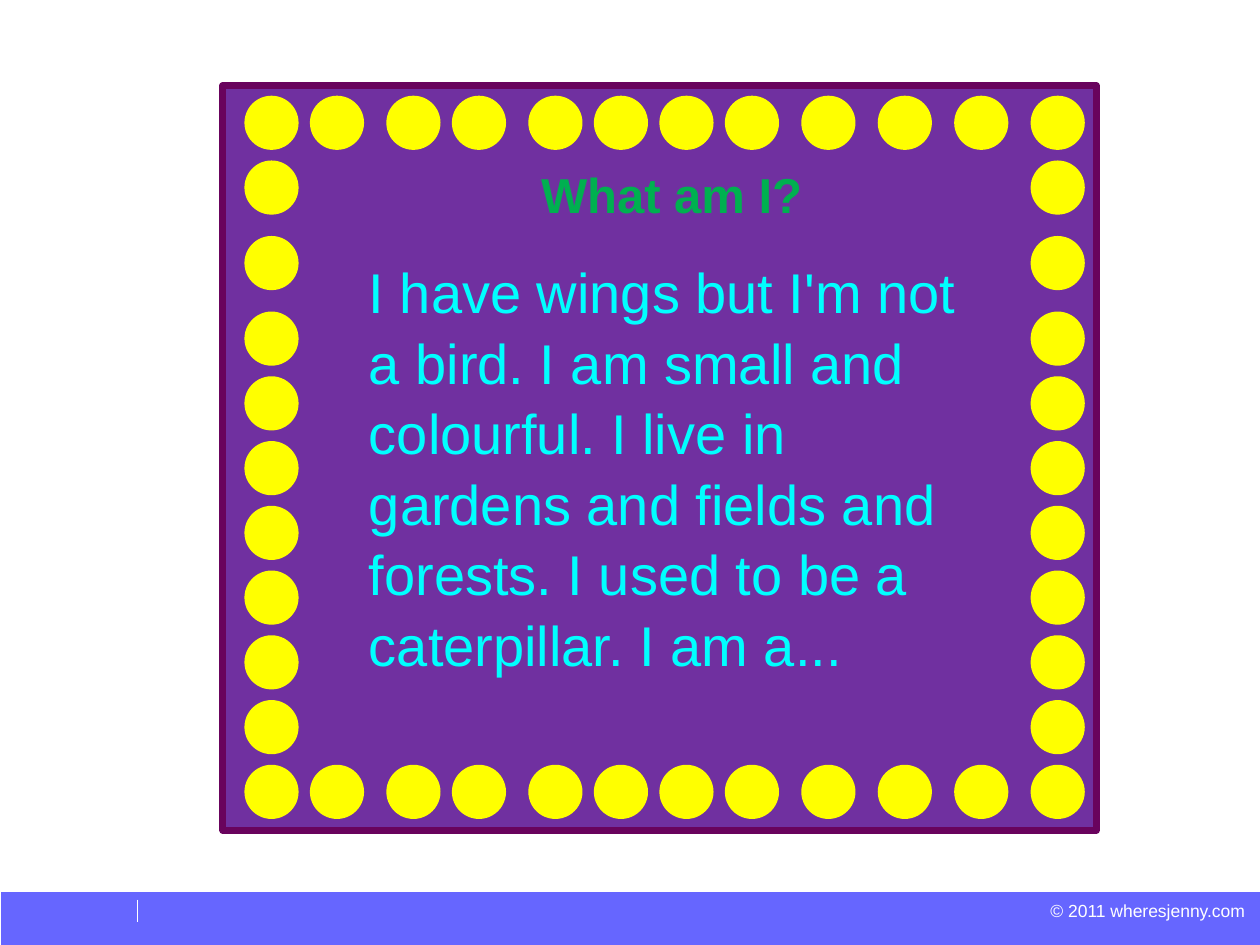
from dataclasses import dataclass
from itertools import accumulate

from lxml import etree
from pptx import Presentation
from pptx.dml.color import RGBColor
from pptx.enum.shapes import MSO_CONNECTOR as Connector, MSO_SHAPE as Shape
from pptx.enum.text import MSO_ANCHOR as Anchor, PP_ALIGN as Align
from pptx.oxml.ns import qn
from pptx.slide import Slide
from pptx.util import Inches, Pt

COLUMNS, ROWS = 100, 75
WIDTH, HEIGHT = Inches(10), Inches(7.5)
DOT = 4.3
WIDE_STEP = 7 / 6  # a wide step between dots, in narrow steps


def colour(value):
    return RGBColor.from_string(value)


def dot_stops(first, last, pattern):
    """Spread dots from first to last; the pattern names each step n(arrow) or w(ide)."""
    weights = [WIDE_STEP if step == "w" else 1 for step in pattern]
    narrow = (last - first) / sum(weights)
    return [first + narrow * total for total in accumulate(weights, initial=0)]


@dataclass
class Card:
    slide: Slide
    font: str = "Arial"
    line_spacing: float = 1.05

    def box(self, left, top, width, height):
        """Turn columns and rows of the grid into slide lengths."""
        return (int(WIDTH * left / COLUMNS), int(HEIGHT * top / ROWS),
                int(WIDTH * width / COLUMNS), int(HEIGHT * height / ROWS))

    def shape(self, kind, place, fill, line=None, line_width=0, parent=None):
        shapes = (parent or self.slide).shapes
        shape = shapes.add_shape(kind, *self.box(*place))
        shape.shadow.inherit = False
        shape.fill.solid()
        shape.fill.fore_color.rgb = colour(fill)
        if line:
            shape.line.color.rgb = colour(line)
            shape.line.width = Pt(line_width)
        else:
            shape.line.fill.background()

    def vertical_line(self, left, top, height, line):
        x, y, _, length = self.box(left, top, 0, height)
        connector = self.slide.shapes.add_connector(Connector.STRAIGHT, x, y, x, y + length)
        connector.line.color.rgb = colour(line)
        connector.line.width = Pt(0.75)
        etree.SubElement(connector._element.spPr, qn("a:effectLst"))

    def set_text(self, shape, text, size, fill, align, bold=False, spacing=None):
        frame = shape.text_frame
        frame.vertical_anchor = Anchor.TOP
        frame.text = text
        paragraph = frame.paragraphs[0]
        paragraph.alignment = align
        paragraph.line_spacing = spacing or self.line_spacing
        font = paragraph.font
        font.name, font.size, font.bold = self.font, Pt(size), bold
        font.color.rgb = colour(fill)
        return frame

    def title(self, place, text, size, fill):
        """Fill the title placeholder and bring it in front of the frame."""
        title = self.slide.shapes.title
        title.left, title.top, title.width, title.height = self.box(*place)
        self.set_text(title, text, size, fill, Align.CENTER, bold=True)
        self.slide.shapes._spTree.append(title._element)

    def text(self, place, text, size, fill):
        text_box = self.slide.shapes.add_textbox(*self.box(*place))
        self.set_text(text_box, text, size, fill, Align.LEFT).word_wrap = True

    def copyright(self, place, text, size, fill):
        text_box = self.slide.shapes.add_textbox(*self.box(*place))
        frame = self.set_text(text_box, text, size, fill, Align.RIGHT, spacing=1.0)
        frame.word_wrap = False
        frame.margin_left = frame.margin_right = frame.margin_top = frame.margin_bottom = 0

    def dotted_frame(self, place, columns, rows):
        group = self.slide.shapes.add_group_shape()
        self.shape(Shape.RECTANGLE, place, "7030A0", "69035D", 4, parent=group)
        for row in rows:
            on_edge = row in (rows[0], rows[-1])
            for column in columns if on_edge else (columns[0], columns[-1]):
                self.shape(Shape.OVAL, (column, row, DOT, DOT), "FFFF00", parent=group)


def main():
    presentation = Presentation()
    presentation.slide_width, presentation.slide_height = WIDTH, HEIGHT
    card = Card(presentation.slides.add_slide(presentation.slide_layouts[5]))

    card.shape(Shape.RECTANGLE, (0.1, 70.8, 99.9, 4.2), "6666FF")
    card.copyright((83.2, 71.4, 15.6, 1.7), "© 2011 wheresjenny.com", 10, "FFFFFF")
    card.vertical_line(10.9, 71.4, 1.8, "FFFFFF")

    card.dotted_frame((17.7, 6.8, 69.3, 59.1),
                      columns=dot_stops(19.4, 81.8, "nwnwnnnwwww"),
                      rows=dot_stops(7.6, 60.7, "nwwnnnnnnn"))
    card.title((28.3, 12.3, 50, 5.7), "What am I?", 28, "00B050")
    card.text((28.3, 19.7, 50, 33.7),
              "I have wings but I'm not a bird. I am small and colourful. "
              "I live in gardens and fields and forests. "
              "I used to be a caterpillar. I am a...", 32, "00FFFF")

    presentation.save("out.pptx")


if __name__ == "__main__":
    main()
